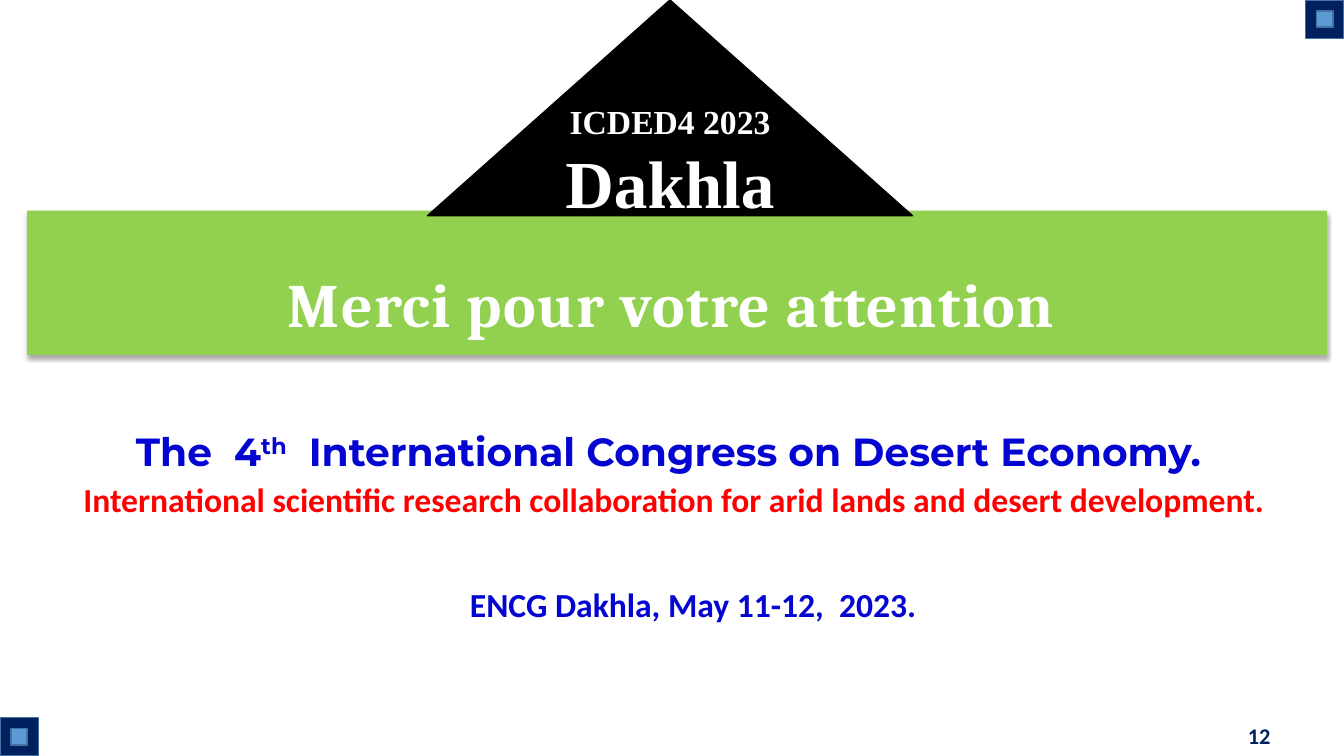
from lxml import etree
from pptx import Presentation
from pptx.dml.color import RGBColor
from pptx.enum import shapes, text
from pptx.oxml.ns import qn
from pptx.util import Inches, Pt

# Content
TITLE = "Merci pour votre attention"
BADGE = [("ICDED4 2023", 24), ("Dakhla", 48)]
CONGRESS = [("The  4", 0), ("th", 30000), ("  International Congress on Desert Economy. ", 0)]
THEME_LINE = "International scientific research collaboration for arid lands and desert development."
PLACE_DATE = "ENCG Dakhla, May 11-12,  2023."
PAGE = "12"


class Theme:
    white, black, green = (RGBColor.from_string(c) for c in ("FFFFFF", "000000", "92D050"))
    navy, sky, edge = (RGBColor.from_string(c) for c in ("002060", "5B9BD5", "43739E"))
    blue, red = (RGBColor.from_string(c) for c in ("0505D1", "FF0000"))
    title_font, badge_font = "Cambria", "Times New Roman"
    congress_font, body_font = "Montserrat", "Calibri"
    title, congress, body, page = 44, 28, 24, 16


W, H = 13.33, 7.5
prs = Presentation()
prs.slide_width, prs.slide_height = Inches(W), Inches(H)
s = prs.slides.add_slide(prs.slide_layouts[5])


def box(x, y, w, h):
    return [Inches(v) for v in (x, y, w, h)]


def add_shape(kind, bounds, fill, line):
    sp = s.shapes.add_shape(kind, *box(*bounds))
    sp.shadow.inherit = False
    sp.fill.solid()
    sp.fill.fore_color.rgb = fill
    sp.line.color.rgb = line
    sp.line.width = Pt(1)
    return sp


def add_text_box(bounds, anchor, top=0.05):
    tf = s.shapes.add_textbox(*box(*bounds)).text_frame
    tf.word_wrap = True
    tf.vertical_anchor = anchor
    tf.margin_top = Inches(top)
    return tf


def style(p, font, size, color, align=text.PP_ALIGN.CENTER):
    p.alignment = align
    p.font.name, p.font.size, p.font.bold = font, Pt(size), True
    p.font.color.rgb = color


# Nested squares in two opposite corners
SQUARE, INNER = 0.38, 0.16
for x, y in [(0, H - SQUARE), (W - SQUARE, 0)]:
    for size, fill in [(SQUARE, Theme.navy), (INNER, Theme.sky)]:
        inset = (SQUARE - size) / 2
        add_shape(shapes.MSO_SHAPE.RECTANGLE, (x + inset, y + inset, size, size), fill, Theme.edge)

# Title band with its soft shadow
band = s.shapes.title
band.left, band.top, band.width, band.height = box(0.27, 2.09, 12.89, 1.43)
band.fill.solid()
band.fill.fore_color.rgb = Theme.green
effects = etree.SubElement(band._element.spPr, qn("a:effectLst"))
shadow = etree.SubElement(effects, qn("a:outerShdw"), blurRad=str(Pt(3.5)), dist=str(Pt(2.2)),
                          dir="5400000", algn="t", rotWithShape="0")
shadow_color = etree.SubElement(shadow, qn("a:srgbClr"), val=str(Theme.black))
etree.SubElement(shadow_color, qn("a:alpha"), val="32000")

tf = band.text_frame
tf.text = TITLE
tf.auto_size = text.MSO_AUTO_SIZE.NONE
tf.vertical_anchor = text.MSO_ANCHOR.MIDDLE
tf.margin_top, tf.margin_right = Inches(0.44), Inches(0.21)
p = tf.paragraphs[0]
style(p, Theme.title_font, Theme.title, Theme.white)
p.line_spacing = 1.0
p.runs[0].font._element.set("spc", "100")

# Triangular badge
badge = add_shape(shapes.MSO_SHAPE.ISOSCELES_TRIANGLE, (4.24, 0, 4.81, 2.14), Theme.black, Theme.black)
tf = badge.text_frame
tf.text = "\n".join(line for line, _ in BADGE)
tf.vertical_anchor = text.MSO_ANCHOR.MIDDLE
for p, (_, size) in zip(tf.paragraphs, BADGE):
    style(p, Theme.badge_font, size, Theme.white)

# Congress name and theme
tf = add_text_box((0.23, 3.59, 12.91, 1.91), text.MSO_ANCHOR.TOP, 0.65)
p = tf.paragraphs[0]
style(p, Theme.congress_font, Theme.congress, Theme.blue)
for words, raised in CONGRESS:
    r = p.add_run()
    r.text = words
    if raised:
        r.font._element.set("baseline", str(raised))
p = tf.add_paragraph()
p.text = THEME_LINE
p.space_before = Pt(3)
style(p, Theme.body_font, Theme.body, Theme.red)

# Place and date
tf = add_text_box((0.42, 5.66, 12.91, 1.45), text.MSO_ANCHOR.TOP, 0.13)
tf.text = PLACE_DATE
style(tf.paragraphs[0], Theme.body_font, Theme.body, Theme.blue)

# Page number
tf = add_text_box((9.7, 7.1, 3, 0.4), text.MSO_ANCHOR.MIDDLE)
tf.text = PAGE
style(tf.paragraphs[0], Theme.body_font, Theme.page, Theme.navy, text.PP_ALIGN.RIGHT)

prs.save("out.pptx")
